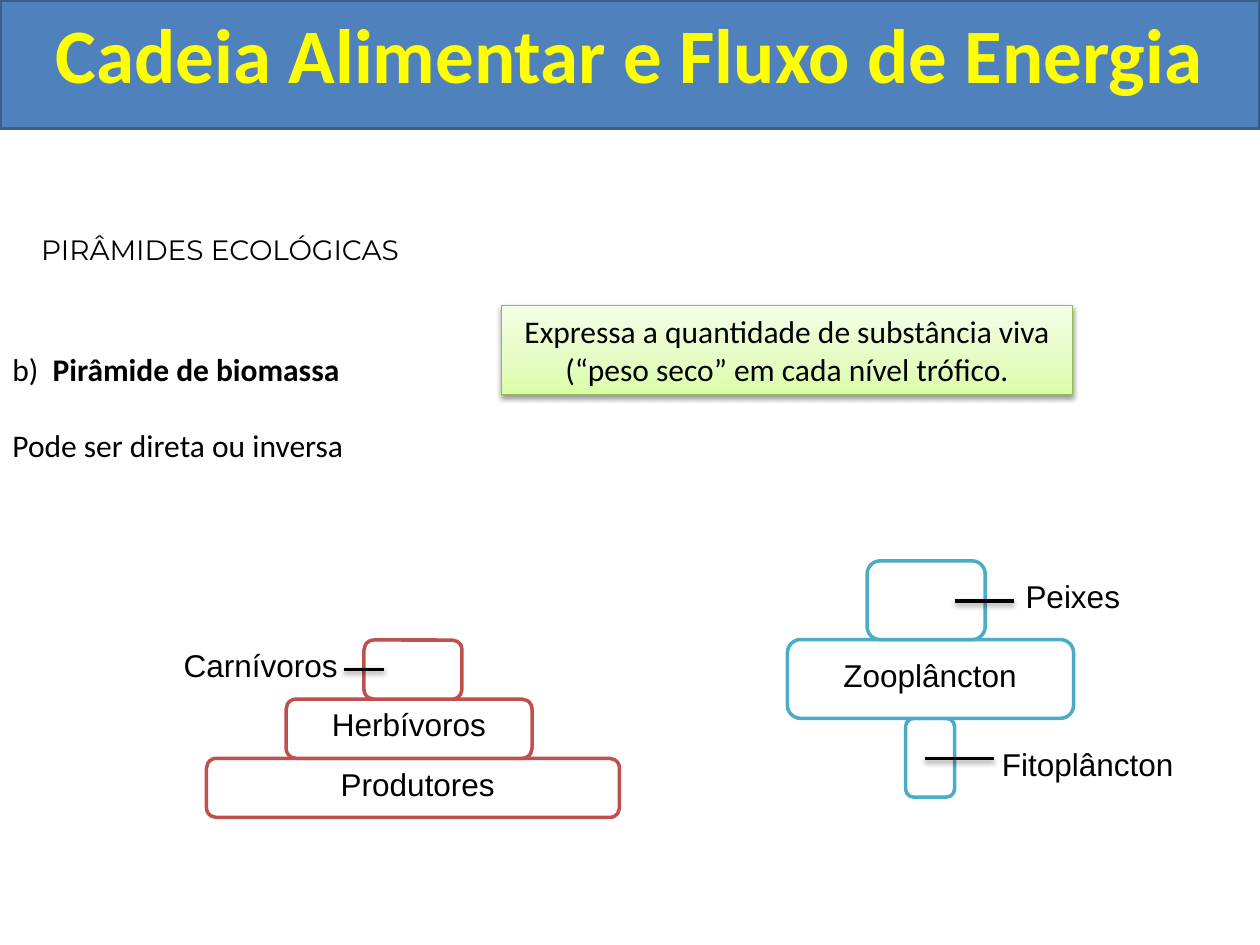
from copy import deepcopy
from dataclasses import dataclass

from lxml import etree
from pptx import Presentation
from pptx.dml.color import RGBColor
from pptx.enum.shapes import MSO_CONNECTOR, MSO_SHAPE
from pptx.enum.text import MSO_ANCHOR, PP_ALIGN
from pptx.oxml.ns import qn
from pptx.util import Pt

RECT = MSO_SHAPE.RECTANGLE
ROUND = MSO_SHAPE.ROUNDED_RECTANGLE
STRAIGHT = MSO_CONNECTOR.STRAIGHT
TOP = MSO_ANCHOR.TOP
MIDDLE = MSO_ANCHOR.MIDDLE
LEFT = PP_ALIGN.LEFT
CENTER = PP_ALIGN.CENTER


@dataclass(frozen=True)
class Theme:
    blue: str = "4F81BD"
    edge: str = "3A5F8C"
    gold: str = "FFFF00"
    ink: str = "000000"
    paper: str = "FFFFFF"
    red: str = "C0504D"
    teal: str = "4BACC6"
    green: str = "98B955"
    fade: tuple = ((0, "DAFDA7"), (0.35, "E4FCC2"), (1, "F5FFE7"))
    head: str = "Calibri"
    label: str = "Arial"
    topic: str = "Montserrat"
    large: int = 44
    body: int = 18
    small: int = 16
    stroke: float = 2
    thin: float = 0.75


class Deck:
    def __init__(self, theme, slide):
        self.theme = theme
        self.slide = slide

    def place(self, shape, box):
        shape.left, shape.top, shape.width, shape.height = map(Pt, box)

    def style(self, para, font, size, color, bold=False, align=CENTER):
        para.alignment = align
        for run in para.runs:
            run.font.name = font
            run.font.size = Pt(size)
            run.font.color.rgb = RGBColor.from_string(color)
            run.font.bold = bold

    def stroke(self, shape, color, width):
        shape.line.color.rgb = RGBColor.from_string(color)
        shape.line.width = Pt(width)

    def shade(self, shape):
        props = shape._element.spPr
        effects = props.find(qn("a:effectLst"))
        if effects is None:
            effects = etree.SubElement(props, qn("a:effectLst"))
        outer = etree.SubElement(
            effects, qn("a:outerShdw"), blurRad=str(Pt(3.1)),
            dist=str(Pt(1.6)), dir="5400000", rotWithShape="0")
        color = etree.SubElement(outer, qn("a:srgbClr"), val=self.theme.ink)
        etree.SubElement(color, qn("a:alpha"), val="38000")

    def shape(self, kind, box, fill, line, width):
        shape = self.slide.shapes.add_shape(kind, *map(Pt, box))
        shape.shadow.inherit = False
        if fill:
            shape.fill.solid()
            shape.fill.fore_color.rgb = RGBColor.from_string(fill)
        self.stroke(shape, line, width)
        return shape

    def title(self, text, box):
        t = self.theme
        title = self.slide.shapes.title
        self.place(title, box)
        self.slide.shapes._spTree.append(title._element)
        title.text_frame.text = text
        title.text_frame.vertical_anchor = TOP
        self.style(title.text_frame.paragraphs[0], t.head, t.large, t.gold, True)

    def text(self, text, box, font, size, align=CENTER):
        frame = self.slide.shapes.add_textbox(*map(Pt, box)).text_frame
        frame.word_wrap = True
        frame.text = text
        for para in frame.paragraphs:
            self.style(para, font, size, self.theme.ink, align=align)
        return frame

    def label(self, text, left, top, width):
        self.text(text, (left, top, width, 29), self.theme.label, self.theme.body)

    def intro(self, mark, term, note, box, indent, gap):
        t = self.theme
        frame = self.text(f"{mark}\t\n{note}", box, t.head, t.body, LEFT)
        first, last = frame.paragraphs
        first.add_run().text = term
        self.style(first, t.head, t.body, t.ink, align=LEFT)
        first.runs[-1].font.bold = True
        props = first._p.get_or_add_pPr()
        props.set("marL", str(Pt(indent)))
        props.set("indent", str(-Pt(indent)))
        last.space_before = Pt(gap)

    def tiers(self, spans, top, step, color):
        for row, (left, width) in reversed(list(enumerate(spans))):
            box = (left, top + row * step, width, step)
            self.shape(ROUND, box, self.theme.paper, color, self.theme.stroke)

    def note(self, text, box):
        t = self.theme
        shape = self.shape(RECT, box, None, t.green, t.thin)
        shape.fill.gradient()
        shape.fill.gradient_angle = 90
        stops = shape._element.spPr.find(qn("a:gradFill")).find(qn("a:gsLst"))
        stops.append(deepcopy(stops[-1]))
        for stop, (spot, color) in zip(shape.fill.gradient_stops, t.fade):
            stop.position = spot
            stop.color.rgb = RGBColor.from_string(color)
        self.shade(shape)
        frame = shape.text_frame
        frame.word_wrap = True
        frame.vertical_anchor = MIDDLE
        frame.text = text
        self.style(frame.paragraphs[0], t.head, t.body, t.ink)

    def link(self, start, end, top):
        line = self.slide.shapes.add_connector(
            STRAIGHT, Pt(start), Pt(top), Pt(end), Pt(top))
        self.stroke(line, self.theme.ink, self.theme.stroke)
        self.shade(line)


def main():
    show = Presentation()
    show.slide_width, show.slide_height = Pt(720), Pt(540)
    theme = Theme()
    deck = Deck(theme, show.slides.add_slide(show.slide_layouts[5]))

    deck.shape(RECT, (0, 0, 720, 73.5), theme.blue, theme.edge, theme.stroke)
    deck.title("Cadeia Alimentar e Fluxo de Energia", (0, 0, 720, 82))
    deck.text("PIRÂMIDES ECOLÓGICAS", (16.5, 129.5, 288, 26.5),
              theme.topic, theme.small, LEFT)
    deck.intro("b)", "Pirâmide de biomassa", "Pode ser direta ou inversa",
               (0, 196.5, 219.5, 73), 23, 22)

    top, step = 365.75, 33.8
    deck.tiers([(208, 56), (163.5, 140.5), (118, 236)], top, step, theme.red)
    names = [("Carnívoros", 90, 118), ("Herbívoros", 152, 163.5),
             ("Produtores", 140.5, 196.5)]
    for row, (name, left, width) in enumerate(names):
        deck.label(name, left, top + row * step, width)
    deck.link(196.5, 219.5, 382.5)

    deck.tiers([(495.5, 67.5), (450, 163.5), (517.5, 28)], 320.5, 45, theme.teal)
    deck.label("Peixes", 568, 326, 90)
    deck.label("Zooplâncton", 472.5, 371.5, 118)
    deck.label("Fitoplâncton", 562.5, 422, 118)
    deck.note("Expressa a quantidade de substância viva "
              "(“peso seco” em cada nível trófico.", (286.5, 174.5, 326.5, 51))
    deck.link(528.5, 568, 433.5)
    deck.link(545.5, 579.5, 343.5)

    show.save("out.pptx")


if __name__ == "__main__":
    main()
